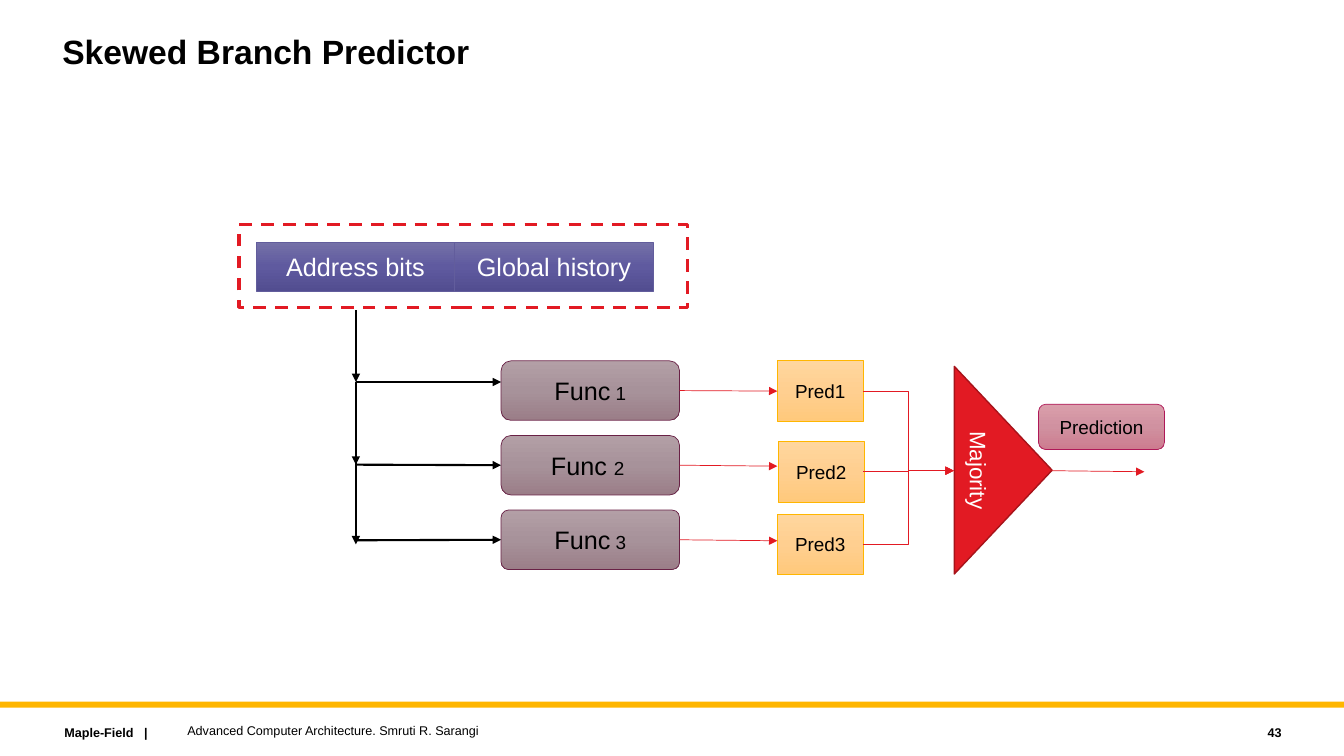
"""Build the skewed branch predictor slide."""
from copy import deepcopy
from lxml import etree
from pptx import Presentation
from pptx.dml.color import RGBColor
from pptx.enum.dml import MSO_LINE
from pptx.enum.shapes import MSO_CONNECTOR, MSO_SHAPE
from pptx.enum.text import MSO_ANCHOR, PP_ALIGN
from pptx.oxml.ns import qn
from pptx.util import Inches, Pt

RECT, ROUND = MSO_SHAPE.RECTANGLE, MSO_SHAPE.ROUNDED_RECTANGLE
TRI = MSO_SHAPE.ISOSCELES_TRIANGLE
LINE, BENT = MSO_CONNECTOR.STRAIGHT, MSO_CONNECTOR.ELBOW
LEFT, MID, RIGHT = PP_ALIGN.LEFT, PP_ALIGN.CENTER, PP_ALIGN.RIGHT
TOP, CENTER = MSO_ANCHOR.TOP, MSO_ANCHOR.MIDDLE
DASH = MSO_LINE.DASH

BLACK, WHITE, RED, GOLD = "000000", "FFFFFF", "E21A23", "FFB600"
BLUE = ("7571A8", "5F5A9F", "524D90")
MAUVE = ("B39FA6", "A7929A", "9B7E88")
PEACH = ("FFD69E", "FFCF90", "FFC97C")
PINK = ("DA9EAB", "D091A0", "CD7C8F")

TEXTS = [
    ("Maple-Field   |", (0.54, 7.14, 2.27, 0.25), 9, True, LEFT, CENTER),
    ("Skewed Branch Predictor", (0.52, 0.3, 10, 0.9), 24, True, LEFT, TOP),
    ("Advanced Computer Architecture. Smruti R. Sarangi",
     (1.76, 7.12, 8, 0.25), 9, False, LEFT, CENTER),
    ("43", (11.41, 7.14, 1.4, 0.25), 9, True, RIGHT, CENTER),
]
INPUTS = ["Address bits", "Global history"]
FUNCS = [
    [("Func", 18), (" 1", 13.5)],
    [("Func ", 18), ("2 ", 13.5)],
    [("Func", 18), (" 3", 13.5)],
]
PREDS = [("Pred1", 7.71, 3.58), ("Pred2", 7.72, 4.38), ("Pred3", 7.71, 5.1)]
TRUNK = 3.53
DROPS = [(3.08, 3.79), (3.79, 4.61), (4.55, 5.4)]
TAPS = [3.79, 4.61, 5.36]
FUNC_X, FUNC_Y, FUNC_W, FUNC_H, STEP = 4.97, 3.58, 1.77, 0.59, 0.74
VOTE = (9.46, 4.67)

prs = Presentation()
prs.slide_width, prs.slide_height = Inches(13.33), Inches(7.5)
slide = prs.slides.add_slide(prs.slide_layouts[6])
rects = []


def color(code):
    return RGBColor.from_string(code)


def write(shape, runs, ink, align=MID, anchor=CENTER, bold=False):
    frame = shape.text_frame
    frame.word_wrap = True
    frame.vertical_anchor = anchor
    para = frame.paragraphs[0]
    para.alignment = align
    for words, size in runs:
        run = para.add_run()
        run.text = words
        font = run.font
        font.name, font.size, font.bold = "Arial", Pt(size), bold
        font.color.rgb = color(ink)
    return para


def paint(shape, fill):
    if fill is None:
        shape.fill.background()
    elif isinstance(fill, str):
        shape.fill.solid()
        shape.fill.fore_color.rgb = color(fill)
    else:
        shape.fill.gradient()
        shape.fill.gradient_angle = 270
        first = shape._element.spPr.find(".//" + qn("a:gs"))
        first.addnext(deepcopy(first))
        for stop, code, pos in zip(shape.fill.gradient_stops, fill, (0, 0.5, 1)):
            stop.color.rgb = color(code)
            stop.position = pos


def box(kind, place, fill, edge=None, width=0.5, runs=(), ink=BLACK):
    shape = slide.shapes.add_shape(kind, *map(Inches, place))
    shape.shadow.inherit = False
    paint(shape, fill)
    if edge:
        shape.line.color.rgb = color(edge)
        shape.line.width = Pt(width)
    else:
        shape.line.fill.background()
    if runs:
        write(shape, runs, ink)
    if kind in (RECT, ROUND):
        rects.append(shape)
    return shape


def join(point, hook):
    near = Inches(0.03)
    px, py = map(Inches, point)
    for shape in rects:
        x, y, w, h = shape.left, shape.top, shape.width, shape.height
        sides = [(x + w // 2, y), (x, y + h // 2),
                 (x + w // 2, y + h), (x + w, y + h // 2)]
        for site, (sx, sy) in enumerate(sides):
            if abs(px - sx) < near and abs(py - sy) < near:
                hook(shape, site)
                return


def arrow(start, end, ink=RED, width=0.5, kind=LINE):
    link = slide.shapes.add_connector(kind, *map(Inches, start + end))
    link.line.color.rgb = color(ink)
    link.line.width = Pt(width)
    etree.SubElement(link.line._get_or_add_ln(), qn("a:tailEnd"), type="triangle")
    etree.SubElement(link._element.spPr, qn("a:effectLst"))
    if kind == LINE:
        join(start, link.begin_connect)
        join(end, link.end_connect)


box(RECT, (0, 6.96, 13.33, 0.06), GOLD)
for words, place, size, bold, align, anchor in TEXTS:
    label = slide.shapes.add_textbox(*map(Inches, place))
    para = write(label, [(words, size)], BLACK, align, anchor, bold)
    if size == 24:
        para.line_spacing = 0.9

for i, words in enumerate(INPUTS):
    box(RECT, (2.54 + 1.97 * i, 2.4, 1.97, 0.49), BLUE, "625D9C",
        runs=[(words, 18)], ink=WHITE)

for i, runs in enumerate(FUNCS):
    func = box(ROUND, (FUNC_X, FUNC_Y + STEP * i, FUNC_W, FUNC_H),
               MAUVE, "692146", runs=runs)
func.adjustments[0] = 0.125

for words, x, y in PREDS:
    box(RECT, (x, y, 0.85, 0.6), PEACH, GOLD, runs=[(words, 13.5)])

vote = box(TRI, (8.92, 4.18, 2.06, 0.97), RED, "A7131A", 1,
           [("Majority", 16)], WHITE)
vote.rotation = 90
box(ROUND, (10.3, 4.01, 1.25, 0.45), PINK, "AF1858", runs=[("Prediction", 13.5)])

for (top, low), tap in zip(DROPS, TAPS):
    arrow((TRUNK, top), (TRUNK, low), BLACK, 1.5)
    arrow((TRUNK, tap), (FUNC_X, tap), BLACK, 1.5)
for i, (words, x, y) in enumerate(PREDS):
    mid = FUNC_Y + STEP * i + FUNC_H / 2
    arrow((FUNC_X + FUNC_W, mid), (7.71, mid + 0.01))
    arrow((8.56, y + 0.3), VOTE, kind=BENT)
arrow((10.43, 4.67), (11.35, 4.68))

frame = box(RECT, (2.37, 2.23, 4.45, 0.82), None, RED, 2.25)
frame.line.dash_style = DASH

prs.save("out.pptx")
